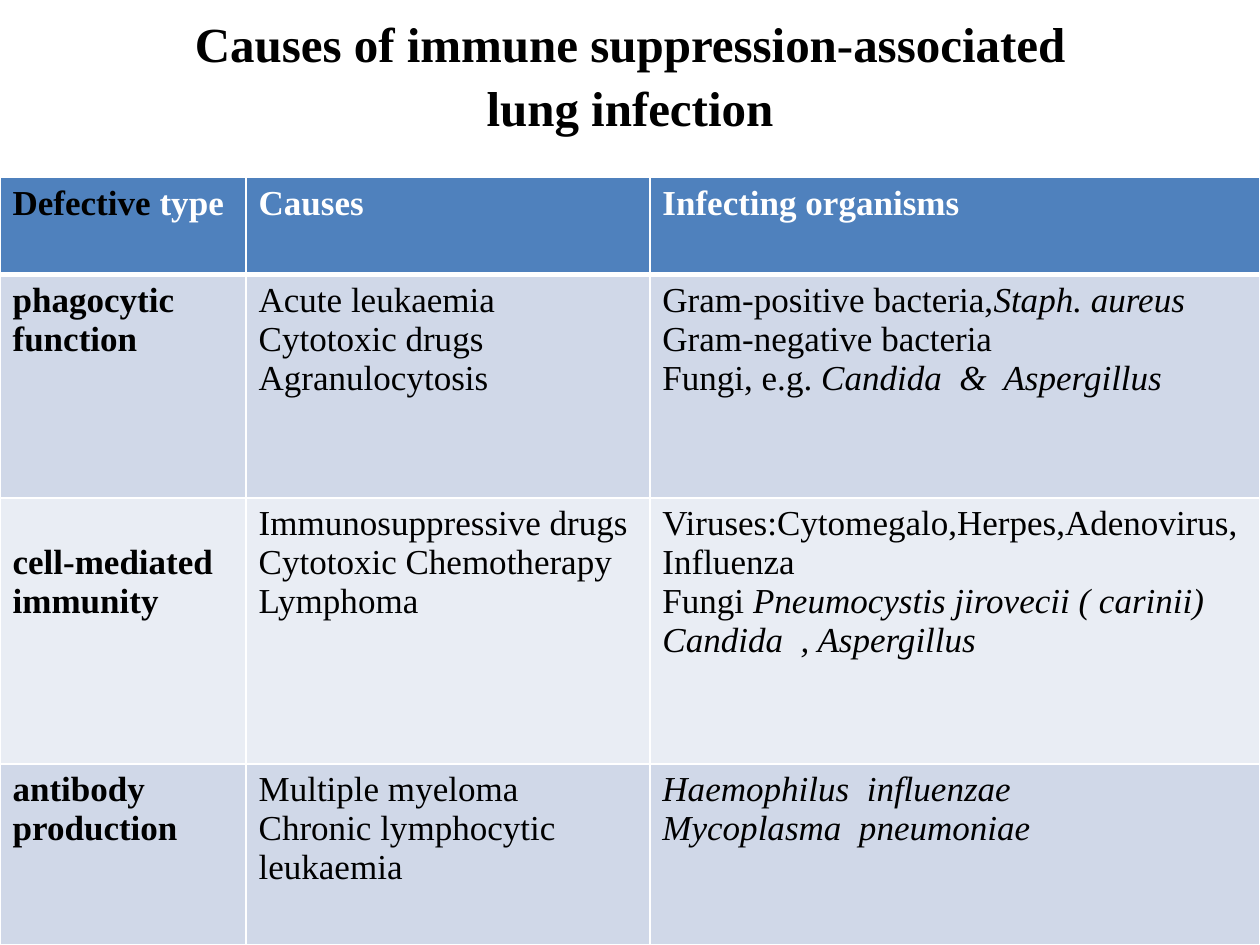
from lxml.etree import SubElement
from pptx import Presentation
from pptx.dml.color import RGBColor
from pptx.enum.text import MSO_ANCHOR, PP_ALIGN
from pptx.oxml.ns import qn
from pptx.util import Cm, Pt

BLACK = RGBColor(0x00, 0x00, 0x00)
WHITE = RGBColor(0xFF, 0xFF, 0xFF)
HEADER_BLUE = RGBColor(0x4F, 0x81, 0xBD)
BAND_DARK = RGBColor(0xD0, 0xD8, 0xE8)
BAND_LIGHT = RGBColor(0xE9, 0xED, 0xF4)
FONT = "Times New Roman"

COLUMN_WIDTHS = (4.96, 8.14, 12.3)
ROW_HEIGHTS = (1.96, 4.5, 5.36, 3.65)
ROW_FILLS = (HEADER_BLUE, BAND_DARK, BAND_LIGHT, BAND_DARK)

# A cell is a list of paragraphs; a paragraph is a list of (text, format) runs
ITALIC = {"italic": True}
HEADER = [
    [[("Defective ", {"color": BLACK}), ("type", {})]],
    [[("Causes", {})]],
    [[("Infecting organisms", {})]],
]
PHAGOCYTIC = [
    [[("phagocytic", {})], [("function", {})]],
    [[("Acute leukaemia", {})], [("Cytotoxic drugs", {})], [("Agranulocytosis", {})]],
    [
        [("Gram-positive bacteria,", {}), ("Staph. aureus", ITALIC)],
        [("Gram-negative bacteria", {})],
        [("Fungi, e.g. ", {}), ("Candida  &  Aspergillus", ITALIC)],
    ],
]
CELL_MEDIATED = [
    [[("cell-mediated", {})], [("immunity", {})]],
    [[("Immunosuppressive drugs Cytotoxic Chemotherapy", {})], [("Lymphoma", {})]],
    [
        [("Viruses:Cytomegalo,Herpes,Adenovirus,Influenza", {})],
        [("Fungi ", {}), ("Pneumocystis jirovecii ( carinii)", ITALIC)],
        [("Candida  , Aspergillus", ITALIC)],
    ],
]
ANTIBODY = [
    [[("antibody", {})], [("production", {})]],
    [[("Multiple myeloma", {})], [("Chronic lymphocytic leukaemia", {})]],
    [[("Haemophilus  influenzae", ITALIC)], [("Mycoplasma  pneumoniae", ITALIC)]],
]


def add_text(paragraph, text, size=20, color=BLACK, bold=False, italic=False):
    run = paragraph.add_run()
    run.text = text
    run.font.name = FONT
    run.font.size = Pt(size)
    run.font.color.rgb = color
    run.font.bold = bold
    run.font.italic = italic


class SlideBuilder:
    def __init__(self, slide, border_color=WHITE, border_width=1):
        self.slide = slide
        self.border_color = border_color
        self.border_width = border_width

    def title(self, lines, left, top, width, height):
        box = self.slide.shapes.add_textbox(Cm(left), Cm(top), Cm(width), Cm(height))
        frame = box.text_frame
        frame.word_wrap = True
        frame.vertical_anchor = MSO_ANCHOR.MIDDLE
        for index, line in enumerate(lines):
            paragraph = frame.paragraphs[0] if index == 0 else frame.add_paragraph()
            paragraph.alignment = PP_ALIGN.CENTER
            paragraph.line_spacing = 1.08
            add_text(paragraph, line, size=28, bold=True)

    def borders(self, cell, **widths):
        properties = cell._tc.get_or_add_tcPr()
        for side in ("L", "R", "T", "B"):
            width = Pt(widths.get(side, self.border_width))
            line = SubElement(properties, qn(f"a:ln{side}"), w=str(width))
            fill = SubElement(line, qn("a:solidFill"))
            SubElement(fill, qn("a:srgbClr"), val=str(self.border_color))

    def cell(self, cell, paragraphs, fill, **style):
        cell.fill.solid()
        cell.fill.fore_color.rgb = fill
        frame = cell.text_frame
        for index, runs in enumerate(paragraphs):
            paragraph = frame.paragraphs[0] if index == 0 else frame.add_paragraph()
            for text, changes in runs:
                add_text(paragraph, text, **{**style, **changes})

    def table(self, rows, left, top):
        table = self.slide.shapes.add_table(
            len(rows), len(COLUMN_WIDTHS), Cm(left), Cm(top),
            Cm(sum(COLUMN_WIDTHS)), Cm(sum(ROW_HEIGHTS)),
        ).table
        for column, width in zip(table.columns, COLUMN_WIDTHS):
            column.width = Cm(width)
        for row, height in zip(table.rows, ROW_HEIGHTS):
            row.height = Cm(height)
        for r, (contents, fill) in enumerate(zip(rows, ROW_FILLS)):
            # Thick rule between the header and the body
            rule = {0: {"B": 3}, 1: {"T": 3}}.get(r, {})
            for c, paragraphs in enumerate(contents):
                cell = table.cell(r, c)
                self.borders(cell, **rule)
                self.cell(cell, paragraphs, fill, bold=r == 0 or c == 0,
                          color=WHITE if r == 0 else BLACK)
        return table


def main():
    presentation = Presentation()
    presentation.slide_width = Cm(25.4)
    presentation.slide_height = Cm(19.05)
    builder = SlideBuilder(presentation.slides.add_slide(presentation.slide_layouts[6]))

    # Title
    builder.title(
        ["Causes of immune suppression-associated", "lung infection"],
        left=0, top=0, width=25.4, height=2.92,
    )

    # Table of defects, with the cell-mediated label one line lower
    defects = builder.table(
        [HEADER, PHAGOCYTIC, CELL_MEDIATED, ANTIBODY], left=0, top=3.58
    )
    defects.cell(2, 0).margin_top = Cm(0.91)

    presentation.save("out.pptx")


if __name__ == "__main__":
    main()
